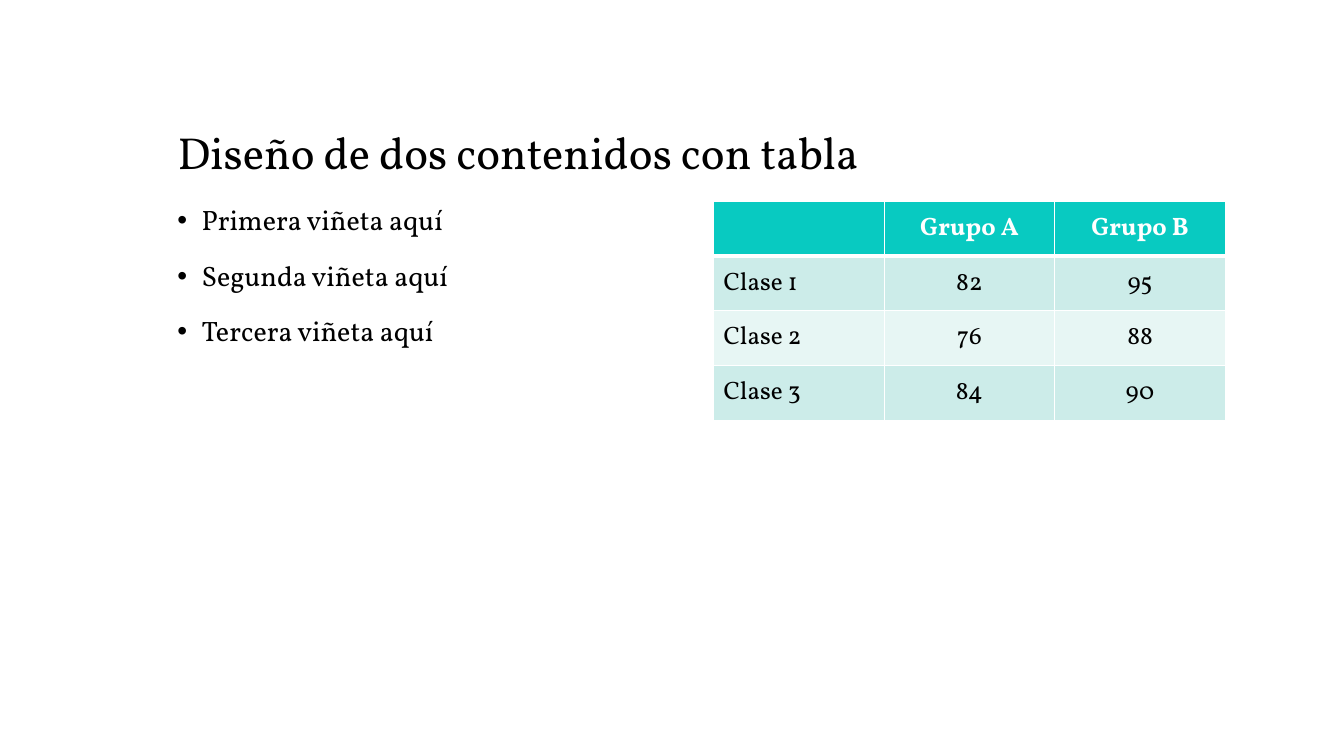
from dataclasses import dataclass

from lxml.etree import SubElement
from pptx import Presentation
from pptx.dml.color import RGBColor
from pptx.enum.text import MSO_ANCHOR, MSO_AUTO_SIZE, PP_ALIGN
from pptx.oxml.ns import qn
from pptx.slide import Slide
from pptx.table import _Cell
from pptx.text.text import TextFrame, _Paragraph
from pptx.util import Cm, Pt

FONT = "Vollkorn"
BLACK = "000000"
WHITE = "FFFFFF"
HEADER_FILL = "08CAC1"
BAND_FILLS = ("CCECE9", "E7F6F4")
THIN, THICK = 1, 3
LINE_SPACING = 0.9

TITLE = "Diseño de dos contenidos con tabla"
BULLETS = ("Primera viñeta aquí", "Segunda viñeta aquí", "Tercera viñeta aquí")
SCORES = (
    ("", "Grupo A", "Grupo B"),
    ("Clase 1", "82", "95"),
    ("Clase 2", "76", "88"),
    ("Clase 3", "84", "90"),
)


@dataclass(frozen=True)
class Area:
    """A rectangle on the slide, in centimetres."""
    left: float
    top: float
    width: float
    height: float

    def lengths(self) -> tuple[Cm, Cm, Cm, Cm]:
        return Cm(self.left), Cm(self.top), Cm(self.width), Cm(self.height)


@dataclass(frozen=True)
class RowStyle:
    fill: str
    text_color: str
    bold: bool
    top_border: int
    bottom_border: int


TITLE_AREA = Area(4.22, 1.47, 26.67, 3.18)
BULLET_AREA = Area(4.22, 5.08, 12.9, 11.63)
TABLE_AREA = Area(17.98, 5.08, 12.9, 5.51)


def color(value: str) -> RGBColor:
    return RGBColor.from_string(value)


def add_span(para: _Paragraph, text: str, size: int,
             text_color: str = BLACK, bold: bool = False) -> None:
    span = para.add_run()
    span.text = text
    span.font.name = FONT
    span.font.size = Pt(size)
    span.font.bold = bold
    span.font.color.rgb = color(text_color)


def add_title(page: Slide) -> None:
    title = page.shapes.title
    title.left, title.top, title.width, title.height = TITLE_AREA.lengths()
    frame = title.text_frame
    frame.auto_size = MSO_AUTO_SIZE.NONE
    frame.vertical_anchor = MSO_ANCHOR.BOTTOM
    para = frame.paragraphs[0]
    para.alignment = PP_ALIGN.LEFT
    para.line_spacing = LINE_SPACING
    add_span(para, TITLE, 32)


def add_bullet(frame: TextFrame, text: str, is_first: bool) -> None:
    para = frame.paragraphs[0] if is_first else frame.add_paragraph()
    properties = para._p.get_or_add_pPr()
    indent = Cm(0.61)
    properties.set("marL", str(indent))
    properties.set("indent", str(-indent))
    SubElement(properties, qn("a:buFont"), typeface="Arial")
    SubElement(properties, qn("a:buChar"), char="•")
    para.line_spacing = LINE_SPACING
    if not is_first:
        para.space_before = Pt(18)
    add_span(para, text, 20)


def add_bullets(page: Slide) -> None:
    box = page.shapes.add_textbox(*BULLET_AREA.lengths())
    box.text_frame.word_wrap = True
    for index, text in enumerate(BULLETS):
        add_bullet(box.text_frame, text, index == 0)


def set_borders(cell: _Cell, style: RowStyle) -> None:
    properties = cell._tc.get_or_add_tcPr()
    widths = {"L": THIN, "R": THIN, "T": style.top_border, "B": style.bottom_border}
    for side, width in widths.items():
        line = SubElement(properties, qn(f"a:ln{side}"), w=str(Pt(width)))
        fill = SubElement(line, qn("a:solidFill"))
        SubElement(fill, qn("a:srgbClr"), val=WHITE)


def row_style(row: int) -> RowStyle:
    if row == 0:
        return RowStyle(HEADER_FILL, WHITE, True, THIN, THICK)
    band = BAND_FILLS[(row - 1) % len(BAND_FILLS)]
    return RowStyle(band, BLACK, False, THICK if row == 1 else THIN, THIN)


def format_cell(cell: _Cell, text: str, style: RowStyle, alignment: PP_ALIGN) -> None:
    set_borders(cell, style)
    cell.fill.solid()
    cell.fill.fore_color.rgb = color(style.fill)
    cell.vertical_anchor = MSO_ANCHOR.MIDDLE
    para = cell.text_frame.paragraphs[0]
    para.alignment = alignment
    if text:
        add_span(para, text, 18, style.text_color, style.bold)


def add_score_table(page: Slide) -> None:
    table = page.shapes.add_table(
        len(SCORES), len(SCORES[0]), *TABLE_AREA.lengths()
    ).table
    for row, texts in enumerate(SCORES):
        for column, text in enumerate(texts):
            alignment = PP_ALIGN.CENTER if column else PP_ALIGN.LEFT
            format_cell(table.cell(row, column), text, row_style(row), alignment)


def main() -> None:
    deck = Presentation()
    deck.slide_width, deck.slide_height = Cm(33.87), Cm(19.05)
    page = deck.slides.add_slide(deck.slide_layouts.get_by_name("Title Only"))
    page.background.fill.solid()
    page.background.fill.fore_color.rgb = color(WHITE)
    add_title(page)
    add_bullets(page)
    add_score_table(page)
    deck.save("out.pptx")


if __name__ == "__main__":
    main()
